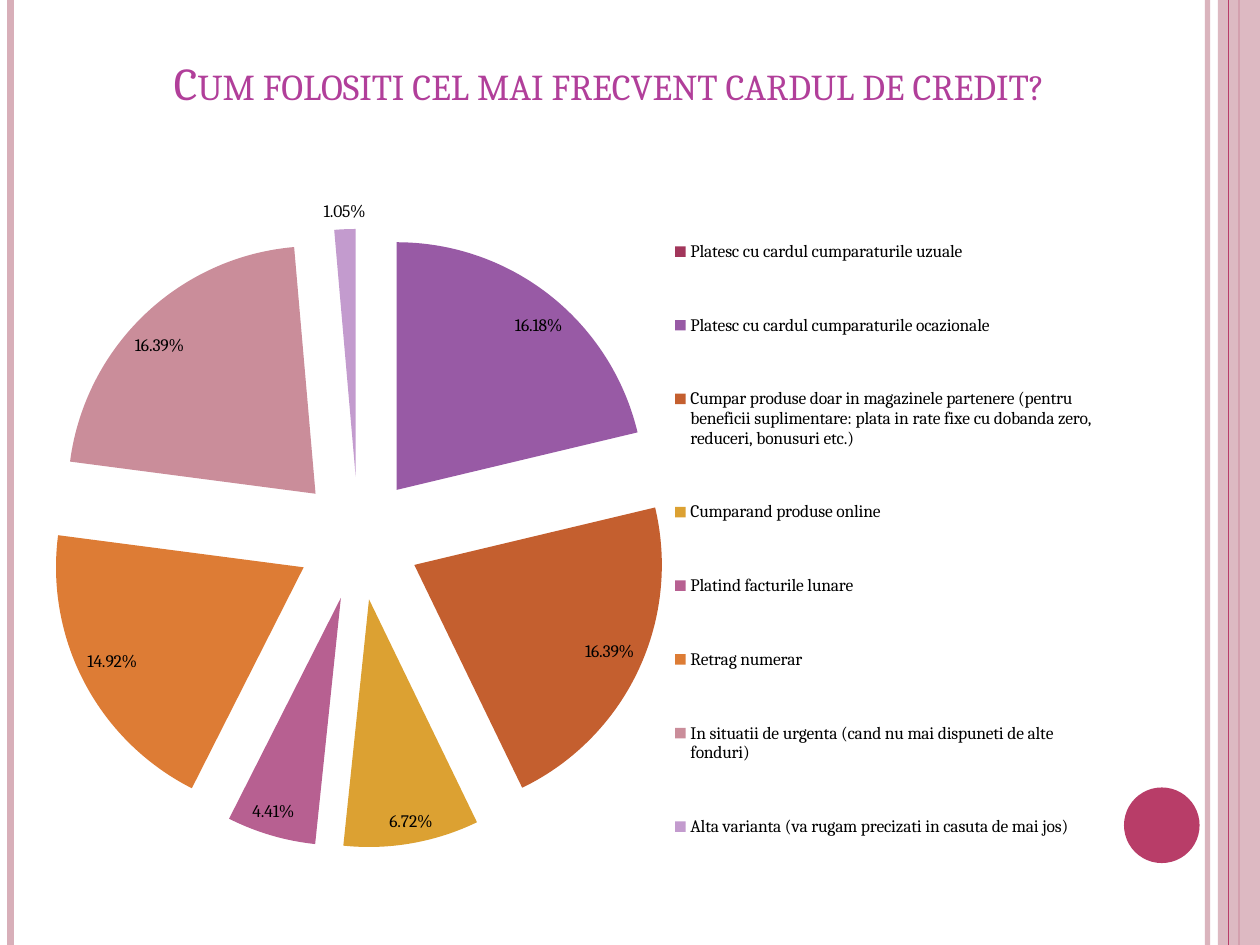
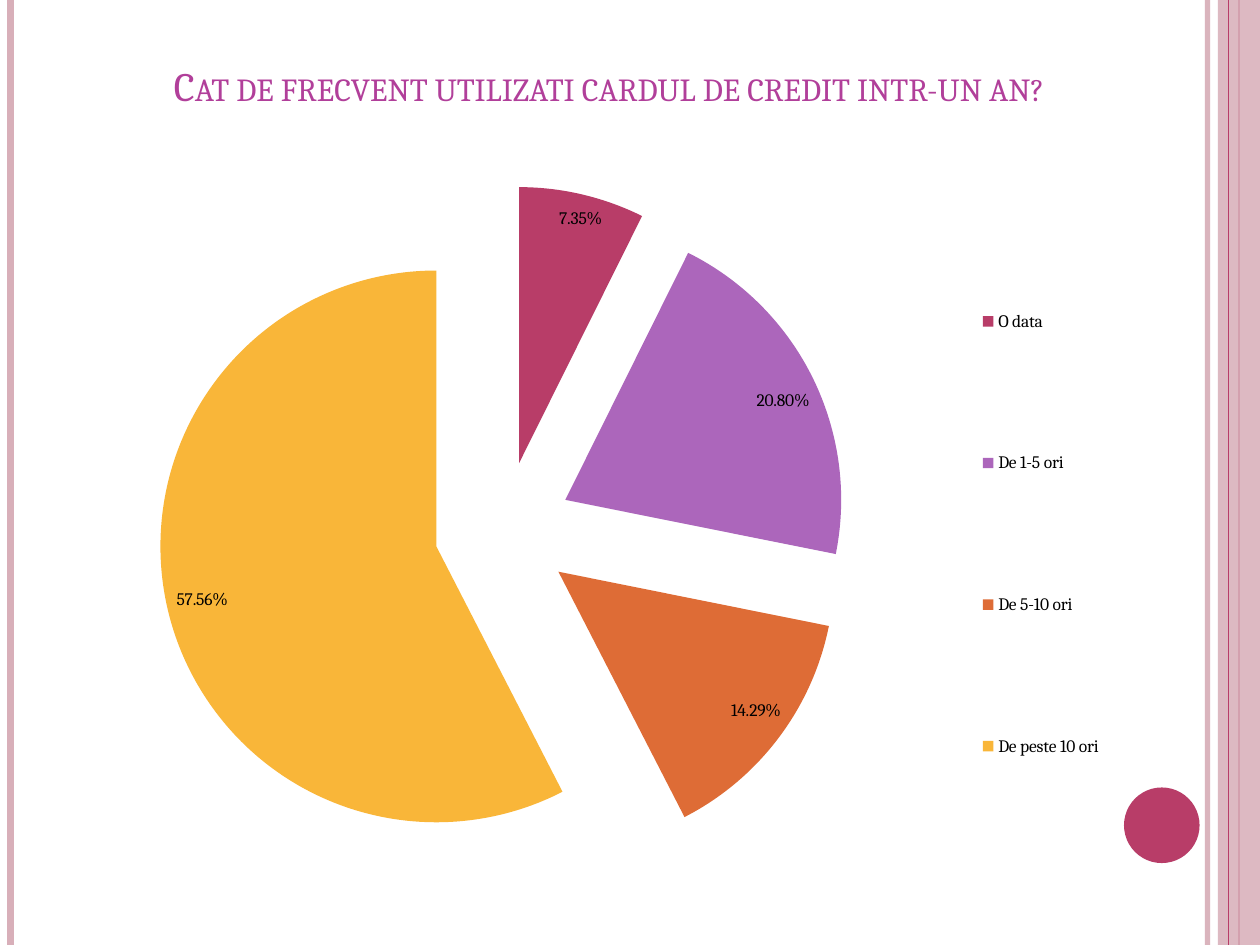
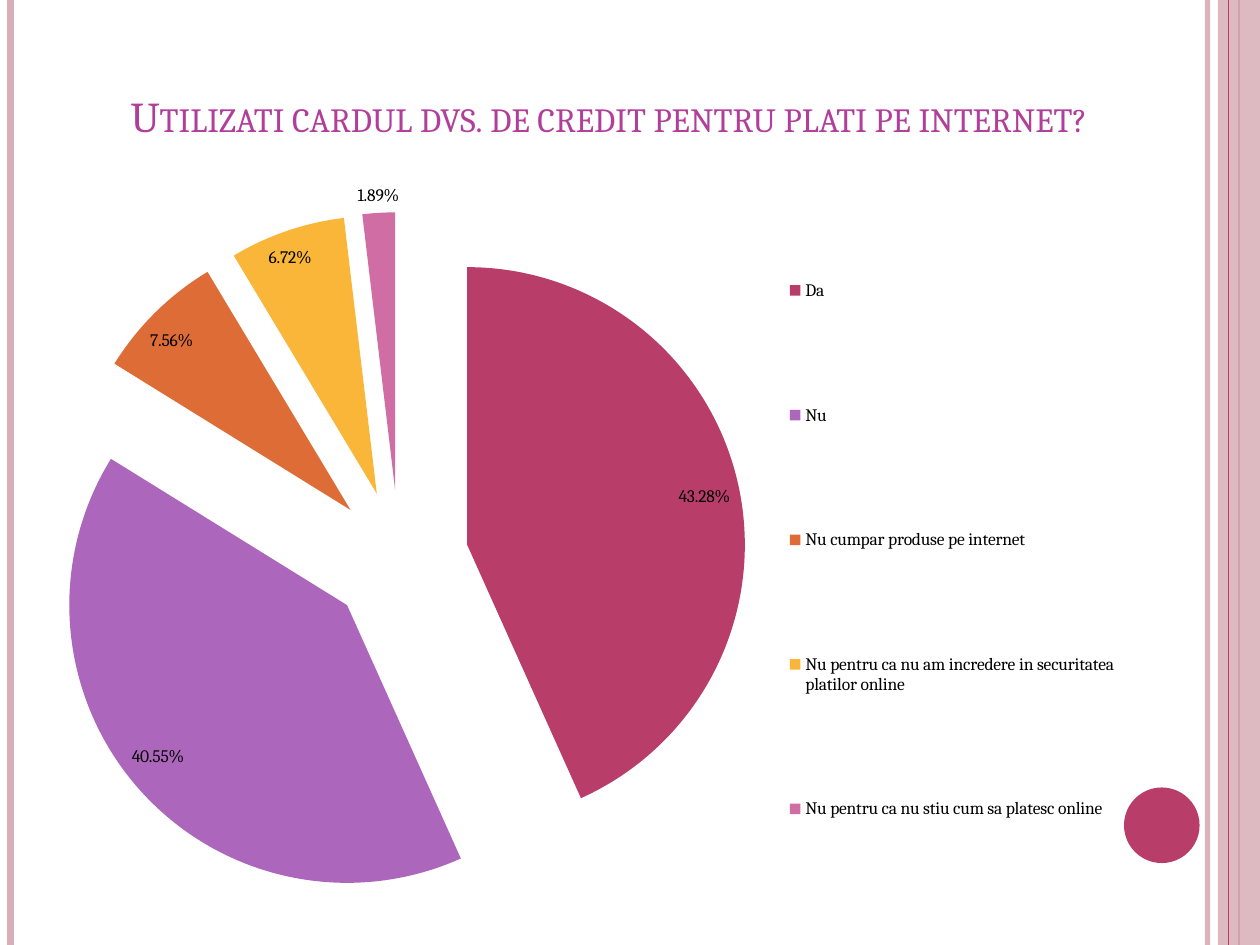
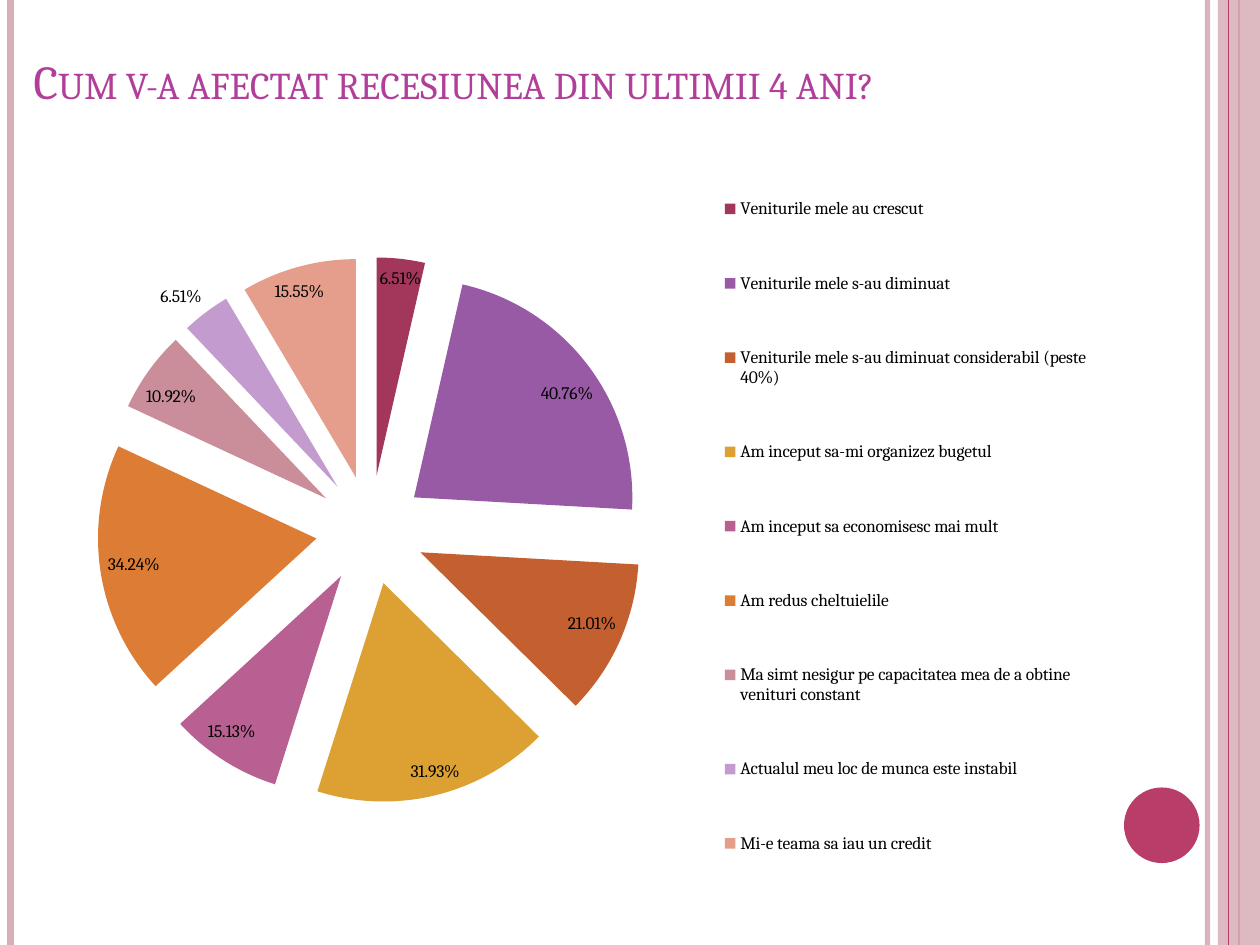
from dataclasses import dataclass

from lxml.etree import SubElement
from pptx import Presentation
from pptx.chart.data import CategoryChartData
from pptx.dml.color import RGBColor
from pptx.enum.chart import XL_CHART_TYPE, XL_LABEL_POSITION, XL_LEGEND_POSITION
from pptx.enum.shapes import MSO_CONNECTOR, MSO_SHAPE
from pptx.enum.text import MSO_ANCHOR, MSO_AUTO_SIZE, PP_ALIGN
from pptx.oxml import parse_xml
from pptx.oxml.ns import nsdecls, qn
from pptx.util import Pt

WIDTH, HEIGHT = 720, 540
FONT = "Cambria"
BLACK = RGBColor(0x00, 0x00, 0x00)
MAGENTA = RGBColor(0xB1, 0x3F, 0x9A)
ROSE = RGBColor(0xB8, 0x3D, 0x68)
PALE_ROSE = RGBColor(0xD8, 0xAF, 0xB9)
BRIGHT = (
    ROSE,
    RGBColor(0xAC, 0x66, 0xBB),
    RGBColor(0xDE, 0x6C, 0x36),
    RGBColor(0xF9, 0xB6, 0x39),
    RGBColor(0xCF, 0x6D, 0xA4),
)
SHADED = (
    RGBColor(0xA2, 0x36, 0x5B),
    RGBColor(0x98, 0x5A, 0xA5),
    RGBColor(0xC4, 0x5F, 0x2F),
    RGBColor(0xDC, 0xA1, 0x32),
    RGBColor(0xB7, 0x60, 0x91),
    RGBColor(0xDD, 0x7C, 0x35),
    RGBColor(0xCA, 0x8D, 0x9A),
    RGBColor(0xC3, 0x9B, 0xCE),
    RGBColor(0xE5, 0x9E, 0x8B),
)
EXPLOSION = 25
TITLE_BOX = (12, 21.6, 672, 44.5)
TALL_TITLE_BOX = (12, 21.6, 672, 62.5)


@dataclass
class Question:
    """A survey question with its answers and its place on the slide."""

    title: str
    title_size: float
    pie_box: tuple
    legend_area: tuple
    answers: dict
    colours: tuple
    title_box: tuple = TITLE_BOX
    align: PP_ALIGN = PP_ALIGN.CENTER
    plot_area: tuple = ()


QUESTIONS = (
    Question(
        "Cum folositi cel mai frecvent cardul de credit?", 26,
        (18, 90, 624, 432), (0.58, 0.04, 0.4, 0.93),
        {
            "Platesc cu cardul cumparaturile uzuale": 0,
            "Platesc cu cardul cumparaturile ocazionale": 0.1618,
            "Cumpar produse doar in magazinele partenere (pentru beneficii suplimentare: "
            "plata in rate fixe cu dobanda zero, reduceri, bonusuri etc.)": 0.1639,
            "Cumparand produse online": 0.0672,
            "Platind facturile lunare": 0.0441,
            "Retrag numerar": 0.1492,
            "In situatii de urgenta (cand nu mai dispuneti de alte fonduri)": 0.1639,
            "Alta varianta (va rugam precizati in casuta de mai jos)": 0.0105,
        },
        SHADED,
    ),
    Question(
        "Cat de frecvent utilizati cardul de credit intr-un an?", 23,
        (12, 96, 630, 414), (0.86, 0.03, 0.13, 0.95),
        {
            "O data": 0.0735,
            "De 1-5 ori": 0.208,
            "De 5-10 ori": 0.1429,
            "De peste 10 ori": 0.5756,
        },
        BRIGHT,
    ),
    Question(
        "Utilizati cardul dvs. de credit pentru plati pe internet?", 24.3,
        (12, 96, 630, 432), (0.7, 0.01, 0.3, 0.99),
        {
            "Da": 0.4328,
            "Nu": 0.4055,
            "Nu cumpar produse pe internet": 0.0756,
            "Nu pentru ca nu am incredere in securitatea platilor online": 0.0672,
            "Nu pentru ca nu stiu cum sa platesc online": 0.0189,
        },
        BRIGHT,
        title_box=TALL_TITLE_BOX,
    ),
    Question(
        "Cum v-a afectat recesiunea din ultimii 4 ani?", 27,
        (12, 78, 624, 450), (0.63, 0.01, 0.36, 0.97),
        {
            "Veniturile mele au crescut": 0.0651,
            "Veniturile mele s-au diminuat": 0.4076,
            "Veniturile mele s-au diminuat considerabil (peste 40%)": 0.2101,
            "Am inceput sa-mi organizez bugetul": 0.3193,
            "Am inceput sa economisesc mai mult": 0.1513,
            "Am redus cheltuielile": 0.3424,
            "Ma simt nesigur pe capacitatea mea de a obtine venituri constant": 0.1092,
            "Actualul meu loc de munca este instabil": 0.0651,
            "Mi-e teama sa iau un credit": 0.1555,
        },
        SHADED,
        align=PP_ALIGN.LEFT,
        plot_area=(0.07, 0.11, 0.5, 0.78),
    ),
)


def apply_format(target, values):
    """Set each named attribute of the target."""
    for name, value in values.items():
        setattr(target, name, value)


def place(shape, box):
    """Move and size a shape to a box in points."""
    apply_format(shape, dict(zip(("left", "top", "width", "height"), map(Pt, box))))


def set_opacity(shape, percent):
    """Make the shape's colour partly transparent."""
    colour = next(shape.element.spPr.iter(qn("a:srgbClr")))
    SubElement(colour, qn("a:alpha")).set("val", str(percent * 1000))


def add_stripe(slide, x, colour, width, opacity=100):
    """Draw a full-height vertical line."""
    stripe = slide.shapes.add_connector(MSO_CONNECTOR.STRAIGHT, Pt(x), 0, Pt(x), Pt(HEIGHT))
    stripe.line.color.rgb = colour
    stripe.line.width = Pt(width)
    SubElement(stripe.element.spPr, qn("a:effectLst"))
    if opacity < 100:
        set_opacity(stripe, opacity)
    return stripe


def add_filled(slide, preset, box, colour):
    """Draw a plain filled shape without outline or shadow."""
    filled = slide.shapes.add_shape(preset, *map(Pt, box))
    filled.fill.solid()
    filled.fill.fore_color.rgb = colour
    filled.line.fill.background()
    filled.shadow.inherit = False
    return filled


def decorate_master(master, slide):
    """Draw the shared side bands and disc, then move them to the master."""
    left_and_right = [
        add_stripe(slide, 690, PALE_ROSE, 3, 93),
        add_stripe(slide, 6, PALE_ROSE, 4.5),
        add_stripe(slide, 708, ROSE, 1.5),
    ]
    band = add_filled(slide, MSO_SHAPE.RECTANGLE, (696, 0, WIDTH - 696, HEIGHT), PALE_ROSE)
    set_opacity(band, 87)
    band_line = add_stripe(slide, 702, ROSE, 0.75)
    disc = add_filled(slide, MSO_SHAPE.OVAL, (642.3, 450, 43.2, 43.2), ROSE)
    for number, part in enumerate([*left_and_right, band, band_line, disc], start=20):
        part.element.xpath(".//p:cNvPr")[0].set("id", str(number))
        master.shapes.element.append(part.element)


def write_title(title, question):
    """Place the title placeholder and write the question in small capitals."""
    place(title, question.title_box)
    frame = title.text_frame
    apply_format(frame, {
        "word_wrap": True,
        "auto_size": MSO_AUTO_SIZE.NONE,
        "vertical_anchor": MSO_ANCHOR.BOTTOM,
    })
    paragraph = frame.paragraphs[0]
    paragraph.alignment = question.align
    run = paragraph.add_run()
    run.text = question.title
    apply_format(run.font, {"name": FONT, "size": Pt(question.title_size)})
    run.font.color.rgb = MAGENTA
    run._r.get_or_add_rPr().set("cap", "small")


def pin_layout(region, index, fractions, target=""):
    """Pin a chart region to fractions of the chart box."""
    for automatic in region.findall(qn("c:layout")):
        region.remove(automatic)
    edges = "".join(f'<c:{side}Mode val="edge"/>' for side in "xy")
    sizes = "".join(f'<c:{side} val="{part}"/>' for side, part in zip("xywh", fractions))
    region.insert(index, parse_xml(
        f'<c:layout {nsdecls("c")}><c:manualLayout>{target}{edges}{sizes}'
        "</c:manualLayout></c:layout>"
    ))


def add_pie(slide, question):
    """Add the exploded pie of answers with its legend and labels."""
    shares = CategoryChartData(number_format="0.00%")
    shares.categories = list(question.answers)
    shares.add_series("Series 1", list(question.answers.values()))
    chart = slide.shapes.add_chart(XL_CHART_TYPE.PIE, *map(Pt, question.pie_box), shares).chart
    apply_format(chart, {"has_title": False, "has_legend": True})
    apply_format(chart.font, {"name": FONT, "size": Pt(10)})
    chart.font.color.rgb = BLACK
    apply_format(chart.legend, {
        "position": XL_LEGEND_POSITION.RIGHT,
        "include_in_layout": False,
    })
    pin_layout(next(chart.element.iter(qn("c:legend"))), 1, question.legend_area)
    chart.plots[0].vary_by_categories = True
    answers = chart.plots[0].series[0]
    for index, colour in enumerate(question.colours[:len(question.answers)]):
        slice_format = answers.points[index].format
        slice_format.fill.solid()
        slice_format.fill.fore_color.rgb = colour
        slice_format.line.fill.background()
    answers._element.find(qn("c:dPt")).addprevious(
        parse_xml(f'<c:explosion {nsdecls("c")} val="{EXPLOSION}"/>')
    )
    apply_format(answers.data_labels, {
        "show_value": True,
        "number_format": "0.00%",
        "number_format_is_linked": False,
        "position": XL_LABEL_POSITION.BEST_FIT,
    })
    if question.plot_area:
        plot_area = next(chart.element.iter(qn("c:plotArea")))
        pin_layout(plot_area, 0, question.plot_area, '<c:layoutTarget val="inner"/>')


def main():
    """Build one slide for each question and save the presentation."""
    presentation = Presentation()
    apply_format(presentation, {"slide_width": Pt(WIDTH), "slide_height": Pt(HEIGHT)})
    title_only = presentation.slide_layouts[5]
    for question in QUESTIONS:
        slide = presentation.slides.add_slide(title_only)
        write_title(slide.shapes.title, question)
        add_pie(slide, question)
    decorate_master(presentation.slide_master, presentation.slides[0])
    presentation.save("out.pptx")


if __name__ == "__main__":
    main()
